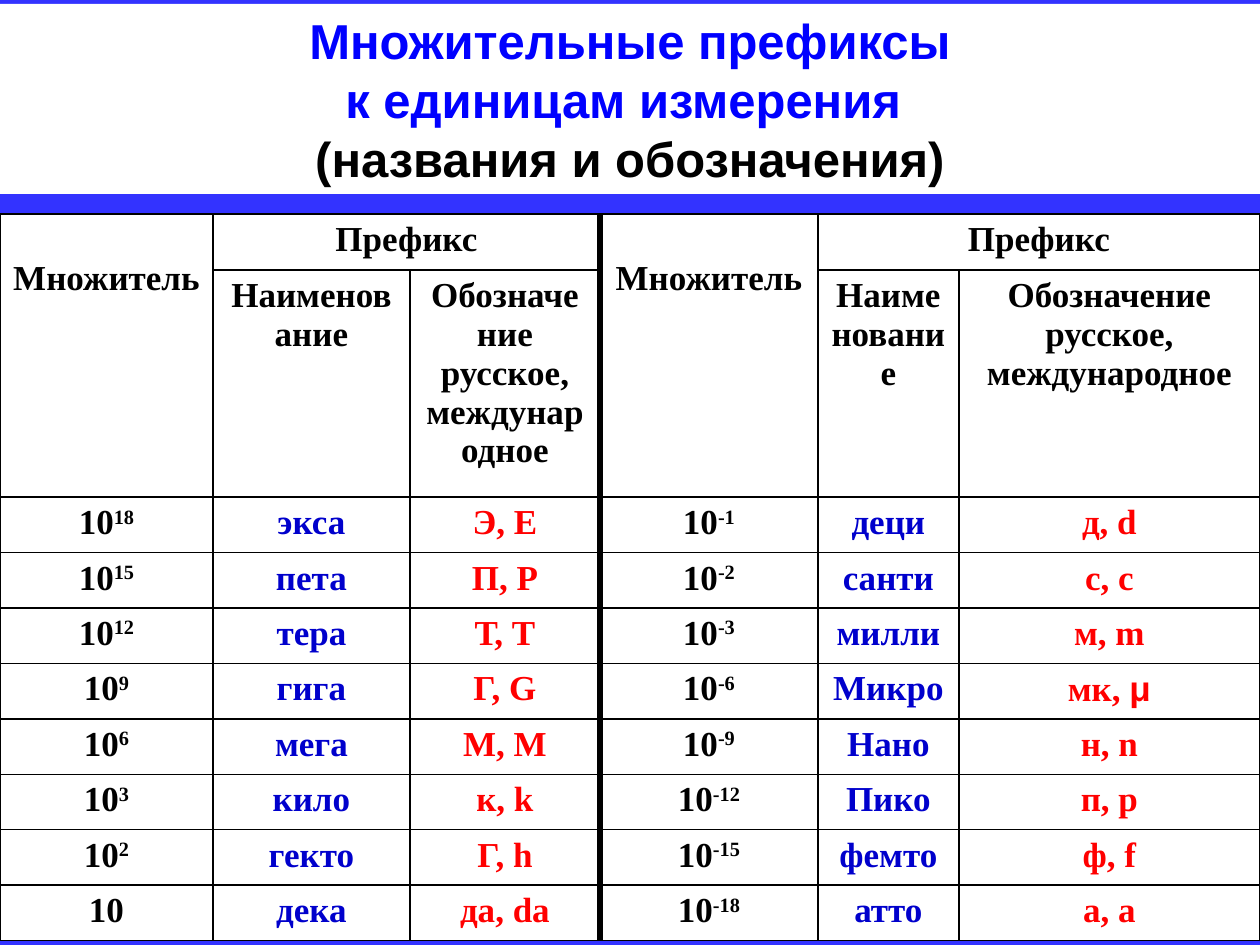
from lxml import etree
from pptx import Presentation
from pptx import util as u
from pptx.dml.color import RGBColor
from pptx.enum import shapes, text
from pptx.oxml.ns import qn

BLACK = RGBColor(0, 0, 0)
WHITE = RGBColor(255, 255, 255)
GROUND = RGBColor(0x33, 0x33, 0xFF)
BLUE = RGBColor(0, 0, 0xFF)
NAVY = RGBColor(0, 0, 0xCC)
RED = RGBColor(0xFF, 0, 0)
SERIF, SANS = "Times New Roman", "Arial"

TITLE = [
    ("Множительные префиксы", BLUE),
    ("к единицам измерения ", BLUE),
    ("(названия и обозначения)", BLACK),
]
FACTOR, PREFIX, NAME = "Множитель", "Префикс", "Наименование"
SIGN = "Обозначение русское, международное"
LARGE = [
    ("18", "экса", "Э, E"), ("15", "пета", "П, P"),
    ("12", "тера", "Т, T"), ("9", "гига", "Г, G"),
    ("6", "мега", "М, M"), ("3", "кило", "к, k"),
    ("2", "гекто", "Г, h"), ("", "дека", "да, da"),
]
SMALL = [
    ("-1", "деци", "д, d"), ("-2", "санти", "с, с"),
    ("-3", "милли", "м, m"), ("-6", "Микро", "мк, μ"),
    ("-9", "Нано", "н, n"), ("-12", "Пико", "п, p"),
    ("-15", "фемто", "ф, f"), ("-18", "атто", "а, a"),
]
COLS = [213, 197, 190, 218, 141, 301]
TOP, HIGH, HEAD = 214, 727, [56, 227]


def px(n):
    return u.Emu(round(n * 914400 / 126))


def write(para, words, size=20, face=SERIF, color=BLACK, base=0):
    para.alignment = text.PP_ALIGN.CENTER
    run = para.add_run()
    run.text = words
    font = run.font
    font.size, font.name, font.bold = u.Pt(size), face, True
    font.color.rgb = color
    if base:
        run._r.get_or_add_rPr().set("baseline", str(base * 1000))


def frame(cell):
    props = cell._tc.get_or_add_tcPr()
    for side in ("lnL", "lnR", "lnT", "lnB"):
        edge = etree.SubElement(props, qn("a:" + side), w=str(u.Pt(1)))
        fill = etree.SubElement(edge, qn("a:solidFill"))
        etree.SubElement(fill, qn("a:srgbClr"), val=str(BLACK))
    cell.fill.solid()
    cell.fill.fore_color.rgb = WHITE


def fill_half(grid, left, rows):
    tall, wide = grid.cell(0, left), grid.cell(0, left + 1)
    tall.merge(grid.cell(1, left))
    wide.merge(grid.cell(0, left + 2))
    tall.margin_top = px(45)
    heads = [(tall, FACTOR), (wide, PREFIX),
             (grid.cell(1, left + 1), NAME), (grid.cell(1, left + 2), SIGN)]
    for cell, words in heads:
        write(cell.text_frame.paragraphs[0], words)
    for row, (power, name, sign) in enumerate(rows, len(HEAD)):
        ten, mid, last = [grid.cell(row, left + i).text_frame.paragraphs[0]
                          for i in range(3)]
        write(ten, "10")
        if power:
            write(ten, power, base=30)
        write(mid, name, color=NAVY)
        start, mu, _ = sign.partition("μ")
        write(last, start, color=RED)
        if mu:
            write(last, mu, face=SANS, color=RED)


def main():
    deck = Presentation()
    deck.slide_width, deck.slide_height = px(1260), px(945)
    slide = deck.slides.add_slide(deck.slide_layouts[6])
    slide.background.fill.solid()
    slide.background.fill.fore_color.rgb = GROUND

    count = len(HEAD) + len(LARGE)
    grid = slide.shapes.add_table(
        count, len(COLS), 0, px(TOP), px(sum(COLS)), px(HIGH)).table
    for col, wide in zip(grid.columns, COLS):
        col.width = px(wide)
    step = (HIGH - sum(HEAD)) / len(LARGE)
    for row, tall in zip(grid.rows, HEAD + [step] * len(LARGE)):
        row.height = px(tall)
    for cell in grid.iter_cells():
        frame(cell)
    fill_half(grid, 0, LARGE)
    fill_half(grid, 3, SMALL)

    panel = slide.shapes.add_shape(
        shapes.MSO_SHAPE.RECTANGLE, 0, px(4), px(1260), px(190))
    panel.shadow.inherit = False
    panel.fill.solid()
    panel.fill.fore_color.rgb = WHITE
    panel.line.fill.background()
    body = panel.text_frame
    body.word_wrap = True
    body.vertical_anchor = text.MSO_ANCHOR.MIDDLE
    for i, (words, color) in enumerate(TITLE):
        para = body.add_paragraph() if i else body.paragraphs[0]
        write(para, words, size=28, face=SANS, color=color)

    mid = px(sum(COLS[:3]))
    rule = slide.shapes.add_connector(
        shapes.MSO_CONNECTOR.STRAIGHT, mid, px(TOP), mid, px(TOP + HIGH))
    rule.line.color.rgb = BLACK
    rule.line.width = u.Pt(3)
    etree.SubElement(rule._element.spPr, qn("a:effectLst"))

    deck.save("out.pptx")


if __name__ == "__main__":
    main()
